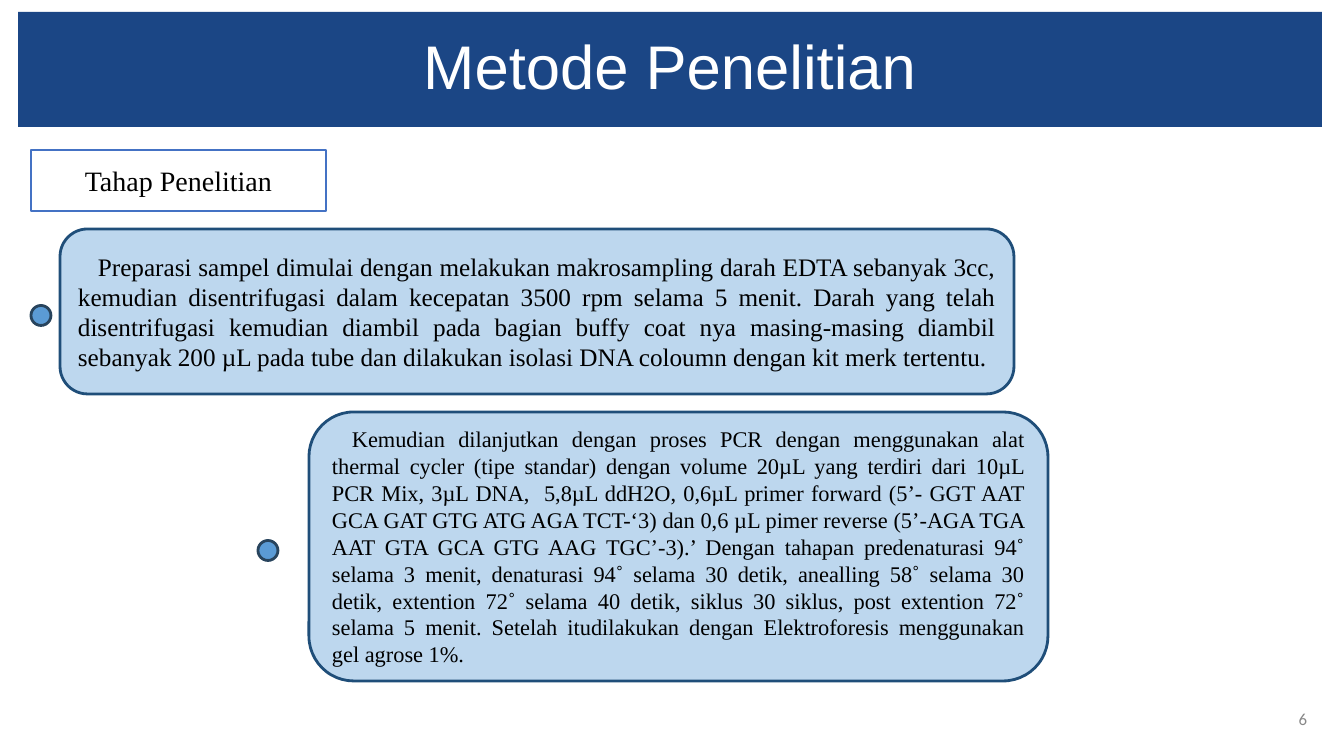
from pptx import Presentation
from pptx.dml.color import RGBColor
from pptx.enum.shapes import MSO_SHAPE as Shape
from pptx.enum.text import MSO_ANCHOR as Anchor, PP_ALIGN as Align
from pptx.util import Pt

# Content: lengths in px
TITLE = ("Metode Penelitian", (18, 12, 1304, 115))
STAGE = ("Tahap Penelitian", (31, 150, 295, 61))
PAGE = ("6", (1260, 699, 57, 40))
STEPS = [
    {"box": (60, 229, 954, 165), "dot_left": 31, "size": 18,
     "text": "Preparasi sampel dimulai dengan melakukan makrosampling darah EDTA "
             "sebanyak 3cc, kemudian disentrifugasi dalam kecepatan 3500 rpm selama "
             "5 menit. Darah yang telah disentrifugasi kemudian diambil pada bagian "
             "buffy coat nya masing-masing diambil sebanyak 200 µL pada tube dan "
             "dilakukan isolasi DNA coloumn dengan kit merk tertentu."},
    {"box": (309, 412, 739, 269), "dot_left": 258, "size": 16,
     "text": "Kemudian dilanjutkan dengan proses PCR dengan menggunakan alat thermal "
             "cycler (tipe standar) dengan volume 20µL yang terdiri dari 10µL PCR Mix, "
             "3µL DNA,  5,8µL ddH2O, 0,6µL primer forward (5’- GGT AAT GCA GAT GTG ATG "
             "AGA TCT-‘3) dan 0,6 µL pimer reverse (5’-AGA TGA AAT GTA GCA GTG AAG "
             "TGC’-3).’ Dengan tahapan predenaturasi 94˚ selama 3 menit, denaturasi 94˚ "
             "selama 30 detik, anealling 58˚ selama 30 detik, extention 72˚ selama 40 "
             "detik, siklus 30 siklus, post extention 72˚ selama 5 menit. Setelah "
             "itudilakukan dengan Elektroforesis menggunakan gel agrose 1%."},
]
DOT = 20
INDENT = 20
SERIF = "Times New Roman"
EMU_PER_PX = 914400 / 100.8


def px(length):
    return round(length * EMU_PER_PX)


def color(hex_code):
    return RGBColor.from_string(hex_code)


def place(part, area):
    part.left, part.top, part.width, part.height = map(px, area)


def write(part, text, size, font, ink, align):
    frame = part.text_frame
    frame.text = text
    frame.word_wrap = True
    frame.vertical_anchor = Anchor.MIDDLE
    paragraph = frame.paragraphs[0]
    paragraph.alignment = align
    for run in paragraph.runs:
        run.font.size = Pt(size)
        run.font.name = font
        run.font.color.rgb = color(ink)
    return paragraph


def add_outlined(kind, area, fill, line):
    part = slide.shapes.add_shape(kind, *map(px, area))
    part.shadow.inherit = False
    part.fill.solid()
    part.fill.fore_color.rgb = color(fill)
    part.line.color.rgb = color(line)
    part.line.width = Pt(2)
    return part


prs = Presentation()
prs.slide_width, prs.slide_height = px(1344), px(756)
slide = prs.slides.add_slide(prs.slide_layouts[5])

# Title band
text, area = TITLE
title = slide.shapes.title
place(title, area)
title.fill.solid()
title.fill.fore_color.rgb = color("1B4685")
write(title, text, 44, "Arial", "FFFFFF", Align.CENTER).line_spacing = 0.9

# Stage label
text, area = STAGE
stage = add_outlined(Shape.RECTANGLE, area, "FFFFFF", "4472C4")
write(stage, text, 20, SERIF, "000000", Align.CENTER)

# Steps, each with a dot at mid-height
for step in STEPS:
    box = add_outlined(Shape.ROUNDED_RECTANGLE, step["box"], "BDD7EE", "1F4E79")
    body = write(box, step["text"], step["size"], SERIF, "000000", Align.JUSTIFY)
    # First-line indent
    body._p.get_or_add_pPr().set("indent", str(px(INDENT)))
    _, top, _, height = step["box"]
    dot_top = top + (height - DOT) / 2 + 4
    add_outlined(Shape.OVAL, (step["dot_left"], dot_top, DOT, DOT), "5B9BD5", "28445D")

# Page number
text, area = PAGE
page = slide.shapes.add_textbox(*map(px, area))
write(page, text, 12, "Calibri", "888888", Align.RIGHT)

prs.save("out.pptx")
